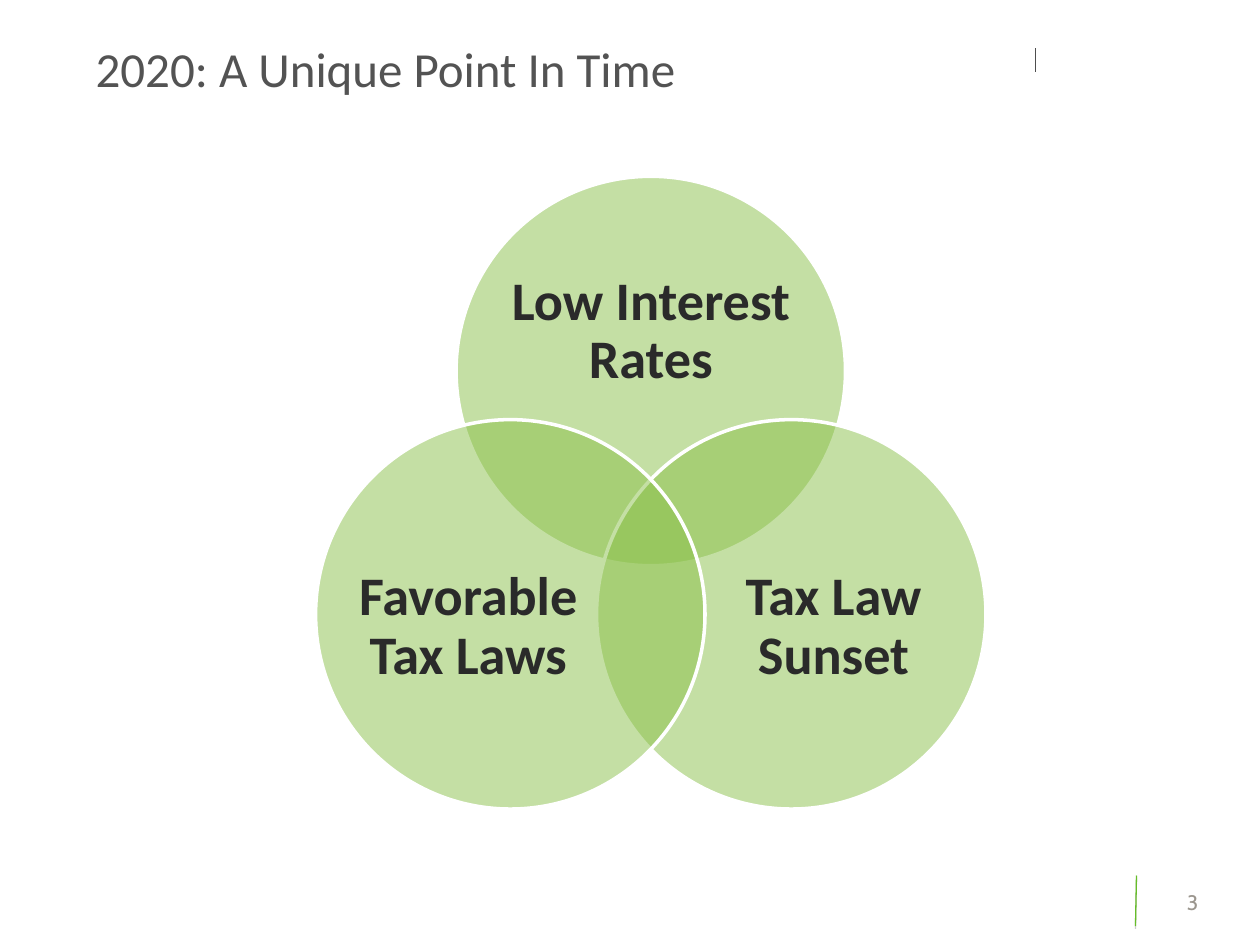
"""Build a one-slide deck with a three-circle Venn diagram."""
import math
from dataclasses import dataclass

import lxml.etree
import pptx
import pptx.dml.color
import pptx.enum.shapes
import pptx.enum.text
import pptx.oxml.ns
import pptx.util

Cm = pptx.util.Cm
Pt = pptx.util.Pt
ALIGN = pptx.enum.text.PP_ALIGN
ANCHOR = pptx.enum.text.MSO_ANCHOR


@dataclass(frozen=True)
class Theme:
    body_font: str = "Calibri"
    number_font: str = "Cabin"
    title_color: str = "535353"
    label_color: str = "2A2A2A"
    number_color: str = "9B968E"
    circle_fill: str = "8BC14A"
    circle_line: str = "FFFFFF"
    tick_color: str = "4E4E4E"
    accent_color: str = "66BD29"
    shadow_color: str = "808080"
    title_size: float = 28
    label_size: float = 31
    number_size: float = 12


def rgb(value):
    return pptx.dml.color.RGBColor.from_string(value)


def add_element(parent, tag, **attributes):
    return lxml.etree.SubElement(parent, pptx.oxml.ns.qn(tag), attributes)


class SlideBuilder:
    def __init__(self, slide, theme):
        self.slide = slide
        self.theme = theme

    def text(self, text, left, top, width, height, size, color, font=None, bold=False,
             align=ALIGN.LEFT, anchor=ANCHOR.TOP, insets=(0, 0), spacing=0.9, wrap=True):
        box = self.slide.shapes.add_textbox(Cm(left), Cm(top), Cm(width), Cm(height))
        frame = box.text_frame
        frame.text = text
        frame.word_wrap = wrap
        frame.vertical_anchor = anchor
        frame.margin_left = frame.margin_right = Cm(insets[0])
        frame.margin_top = frame.margin_bottom = Cm(insets[1])
        para = frame.paragraphs[0]
        para.alignment = align
        para.line_spacing = spacing
        span = para.runs[0]
        span.font.name = font or self.theme.body_font
        span.font.size = Pt(size)
        span.font.bold = bold
        span.font.color.rgb = rgb(color)

    def line(self, start, end, color, shadow=False):
        line = self.slide.shapes.add_connector(
            pptx.enum.shapes.MSO_CONNECTOR.STRAIGHT, *map(Cm, start + end))
        line.line.color.rgb = rgb(color)
        line.line.width = Pt(0.75)
        effects = add_element(line._element.spPr, "a:effectLst")
        if shadow:
            outer = add_element(effects, "a:outerShdw", blurRad="0", dist=str(Pt(1.6)),
                                dir="5400000", rotWithShape="0")
            tint = add_element(outer, "a:srgbClr", val=self.theme.shadow_color)
            add_element(tint, "a:alpha", val="38000")

    def circle(self, center_x, center_y, diameter):
        circle = self.slide.shapes.add_shape(
            pptx.enum.shapes.MSO_SHAPE.OVAL, Cm(center_x - diameter / 2),
            Cm(center_y - diameter / 2), Cm(diameter), Cm(diameter))
        circle.shadow.inherit = False
        circle.fill.solid()
        circle.fill.fore_color.rgb = rgb(self.theme.circle_fill)
        tint = circle._element.spPr.find(".//" + pptx.oxml.ns.qn("a:srgbClr"))
        add_element(tint, "a:alpha", val="50000")
        circle.line.color.rgb = rgb(self.theme.circle_line)
        circle.line.width = Pt(2)

    def label(self, text, center_x, center_y, width, height):
        self.text(text, center_x - width / 2, center_y - height / 2, width, height,
                  self.theme.label_size, self.theme.label_color, bold=True,
                  align=ALIGN.CENTER, anchor=ANCHOR.MIDDLE)

    def venn(self, center_x, center_y, radius, diameter, sets):
        for index, (text, shift_x, shift_y, width, height) in enumerate(sets):
            angle = math.radians(120 * index - 90)
            x = center_x + radius * math.cos(angle)
            y = center_y + radius * math.sin(angle)
            self.circle(x, y, diameter)
            self.label(text, x + shift_x, y + shift_y, width, height)


def main():
    deck = pptx.Presentation()
    deck.slide_width, deck.slide_height = Cm(25.4), Cm(19.05)
    theme = Theme()
    page = SlideBuilder(deck.slides.add_slide(deck.slide_layouts[6]), theme)
    page.line((20.88, 0.97), (20.88, 1.45), theme.tick_color)
    page.line((22.91, 17.65), (22.89, 18.67), theme.accent_color, shadow=True)
    page.text("2020: A Unique Point In Time", 1.68, 0.79, 22.94, 3.18,
              theme.title_size, theme.title_color, insets=(0.25, 0.13))
    page.venn(13.12, 10.75, 3.27, 7.85, [
        ("Low Interest Rates", 0, -0.79, 5.77, 3.53),
        ("Tax Law Sunset", 0.85, 0.27, 4.72, 4.32),
        ("Favorable Tax Laws", -0.85, 0.27, 4.72, 4.32),
    ])
    page.text("3", 23.22, 17.81, 1.65, 1.02, theme.number_size, theme.number_color,
              font=theme.number_font, align=ALIGN.CENTER, insets=(0.13, 0.13),
              spacing=1.0, wrap=False)
    deck.save("out.pptx")


if __name__ == "__main__":
    main()
